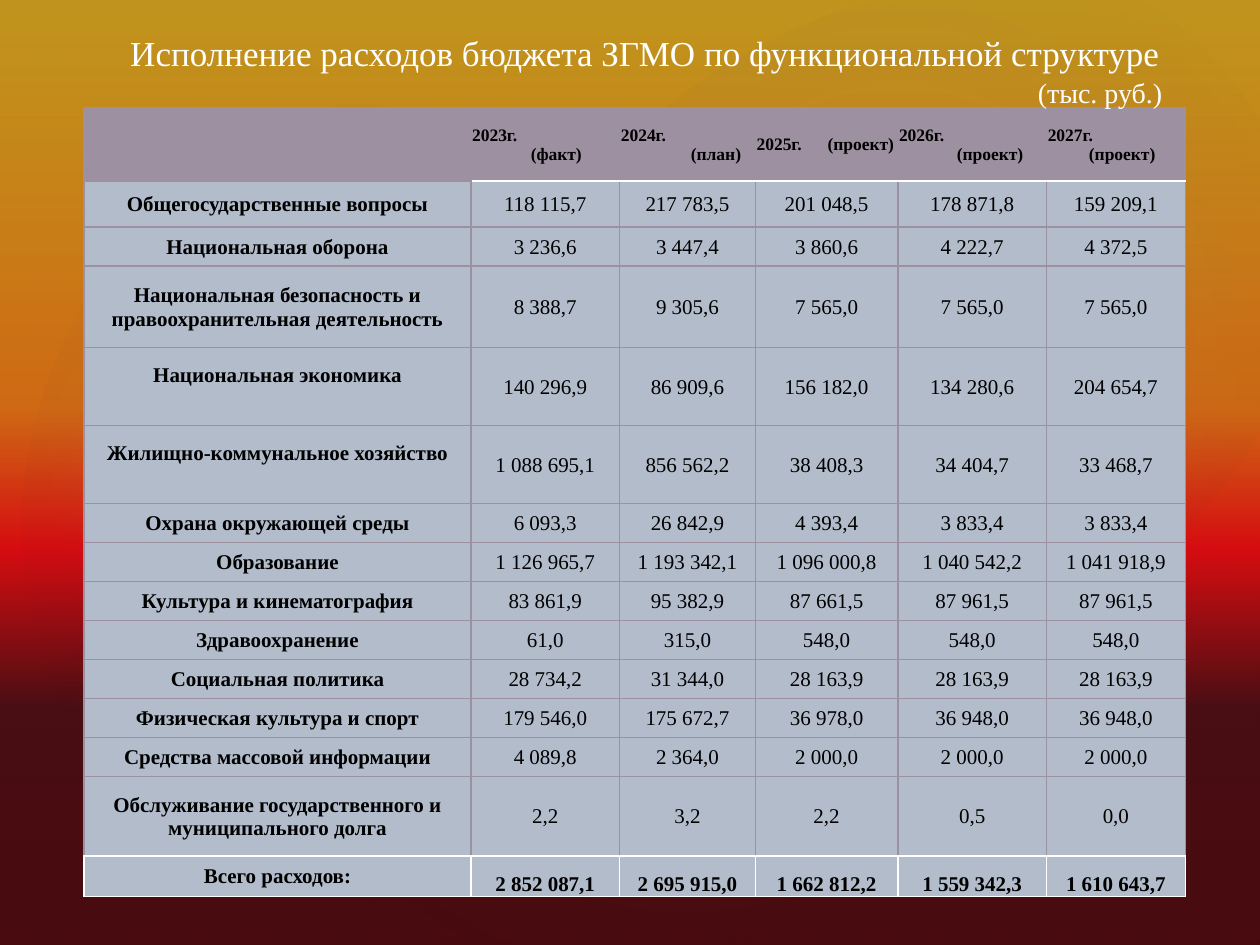
from typing import NamedTuple

from lxml import etree
from pptx import Presentation
from pptx.dml.color import RGBColor
from pptx.enum import shapes as kinds, text as txt
from pptx.oxml.ns import qn
from pptx.util import Pt

FONT = "Times New Roman"
WHITE, BLACK, MAUVE, PALE = "FFFFFF", "000000", "9D90A0", "B2BCCB"
MIDDLE, BOTTOM = txt.MSO_ANCHOR.MIDDLE, txt.MSO_ANCHOR.BOTTOM
LEFT, CENTER = txt.PP_ALIGN.LEFT, txt.PP_ALIGN.CENTER
INSET = 0.72


class Stop(NamedTuple):
    pos: int
    color: str
    alpha: int = 100


class Glow(NamedTuple):
    left: float
    top: float
    width: float
    height: float
    turn: float
    alpha: int


class Head(NamedTuple):
    year: str
    note: str
    indent: float
    width: float
    one_line: bool = False


class Row(NamedTuple):
    name: str
    values: str
    height: float = 22.3
    lift: float = 0


SKY = [Stop(0, "FFC000"), Stop(43, "FF7A00"), Stop(58, "FF0300"), Stop(75, "4D0808")]
VEIL = [Stop(0, "504652", 36), Stop(100, "242852", 10)]
GLOWS = [
    Glow(108, 82, 570, 449, 328.7, 7),
    Glow(-21.6, 92, 436, 353, 294.3, 8),
    Glow(258, 9.4, 510, 374, 328.7, 8),
]
NAME_WIDTH, HEAD_HEIGHT = 221, 41.5
HEADS = [
    Head("2023г.", "(факт)", 33.5, 85),
    Head("2024г.", "(план)", 40, 77.6),
    Head("2025г.", "(проект)", 40.5, 81.4, True),
    Head("2026г.", "(проект)", 33, 85),
    Head("2027г.", "(проект)", 23.5, 79.3),
]
ROWS = [
    Row("Общегосударственные вопросы", "118 115,7|217 783,5|201 048,5|178 871,8|159 209,1", 26.5),
    Row("Национальная оборона", "3 236,6|3 447,4|3 860,6|4 222,7|4 372,5"),
    Row("Национальная безопасность и правоохранительная деятельность",
        "8 388,7|9 305,6|7 565,0|7 565,0|7 565,0", 46.5),
    Row("Национальная экономика", "140 296,9|86 909,6|156 182,0|134 280,6|204 654,7", 44.6, 13.5),
    Row("Жилищно-коммунальное хозяйство",
        "1 088 695,1|856 562,2|38 408,3|34 404,7|33 468,7", 44.6, 13.5),
    Row("Охрана окружающей среды", "6 093,3|26 842,9|4 393,4|3 833,4|3 833,4"),
    Row("Образование", "1 126 965,7|1 193 342,1|1 096 000,8|1 040 542,2|1 041 918,9"),
    Row("Культура и кинематография", "83 861,9|95 382,9|87 661,5|87 961,5|87 961,5"),
    Row("Здравоохранение", "61,0|315,0|548,0|548,0|548,0"),
    Row("Социальная политика", "28 734,2|31 344,0|28 163,9|28 163,9|28 163,9"),
    Row("Физическая культура и спорт", "179 546,0|175 672,7|36 978,0|36 948,0|36 948,0"),
    Row("Средства массовой информации", "4 089,8|2 364,0|2 000,0|2 000,0|2 000,0"),
    Row("Обслуживание государственного и муниципального долга", "2,2|3,2|2,2|0,5|0,0", 45.5),
    Row("Всего расходов:", "2 852 087,1|2 695 915,0|1 662 812,2|1 559 342,3|1 610 643,7", 23),
]


def rgb(color: str) -> RGBColor:
    return RGBColor.from_string(color)


def node(parent, tag: str, **attrs):
    return etree.SubElement(parent, qn(tag), {key: str(val) for key, val in attrs.items()})


def blend(fill, owner, stops: list[Stop], radial: bool = False) -> None:
    """Give the owner's fill any number of stops, top-down or radial."""
    fill.gradient()
    grad = next(owner.iter(qn("a:gradFill")))
    for child in list(grad):
        grad.remove(child)
    group = node(grad, "a:gsLst")
    for stop in stops:
        color = node(node(group, "a:gs", pos=stop.pos * 1000), "a:srgbClr", val=stop.color)
        node(color, "a:alpha", val=stop.alpha * 1000)
    if radial:
        center = node(grad, "a:path", path="circle")
        node(center, "a:fillToRect", l=50000, t=50000, r=50000, b=50000)
    else:
        node(grad, "a:lin", ang=5400000, scaled=0)


def backdrop(slide, kind, box, stops: list[Stop], turn: float = 0, radial: bool = False) -> None:
    shape = slide.shapes.add_shape(kind, *map(Pt, box))
    shape.rotation = turn
    shape.shadow.inherit = False
    shape.line.fill.background()
    blend(shape.fill, shape.element, stops, radial)


def style(par, size: float, color: str, bold: bool = False, align=CENTER) -> None:
    par.alignment = align
    font = par.font
    font.name, font.size, font.bold = FONT, Pt(size), bold
    font.color.rgb = rgb(color)


def caption(shape, words: str, size: float, box, anchor) -> None:
    shape.left, shape.top, shape.width, shape.height = map(Pt, box)
    frame = shape.text_frame
    frame.word_wrap = True
    frame.auto_size = txt.MSO_AUTO_SIZE.NONE
    frame.vertical_anchor = anchor
    frame.text = words
    style(frame.paragraphs[0], size, WHITE)


def dress(cell, fill: str, edges: dict, anchor=MIDDLE, lift: float = 0) -> None:
    """Set a cell's borders, fill, margins and anchor."""
    props = cell._tc.get_or_add_tcPr()
    for side in "LRTB":
        color, width = edges.get(side, (MAUVE, 1))
        line = node(props, f"a:ln{side}", w=int(Pt(width)))
        node(node(line, "a:solidFill"), "a:srgbClr", val=color)
    cell.fill.solid()
    cell.fill.fore_color.rgb = rgb(fill)
    cell.margin_left = cell.margin_right = cell.margin_top = Pt(INSET)
    cell.margin_bottom = Pt(lift)
    cell.vertical_anchor = anchor


def heading(cell, head: Head) -> None:
    """Write the year at the left and the note at its own indent."""
    frame = cell.text_frame
    par = frame.paragraphs[0]
    if head.one_line:
        par.text = f"{head.year}\t{head.note}"
        stops = node(par._p.get_or_add_pPr(), "a:tabLst")
        node(stops, "a:tab", pos=int(Pt(head.indent)), algn="l")
    else:
        par.text = head.year
        note = frame.add_paragraph()
        note.text = head.note
        note._p.get_or_add_pPr().set("marL", str(int(Pt(head.indent))))
    for par in frame.paragraphs:
        style(par, 10, BLACK, True, LEFT)


def budget(slide) -> None:
    widths = [NAME_WIDTH] + [head.width for head in HEADS]
    heights = [HEAD_HEIGHT] + [row.height for row in ROWS]
    grid = slide.shapes.add_table(len(heights), len(widths), Pt(48.1), Pt(61.8),
                                  Pt(sum(widths)), Pt(sum(heights))).table
    for col, width in zip(grid.columns, widths):
        col.width = Pt(width)
    for line, height in zip(grid.rows, heights):
        line.height = Pt(height)

    dress(grid.cell(0, 0), MAUVE, {})
    for c, head in enumerate(HEADS, 1):
        dress(grid.cell(0, c), MAUVE, {"B": (WHITE, 1.5)})
        heading(grid.cell(0, c), head)

    total = len(ROWS)
    for r, row in enumerate(ROWS, 1):
        for c, words in enumerate([row.name, *row.values.split("|")]):
            cell = grid.cell(r, c)
            edges = {"R": (MAUVE, 1.5)} if c == 0 else {}
            if r == 1 and c:
                edges["T"] = (WHITE, 1.5)
            if r == total - 1:
                edges["B"] = (WHITE, 1)
            if r == total:
                edges = dict.fromkeys("LRTB", (WHITE, 1))
            dress(cell, PALE, edges, BOTTOM if r == total and c else MIDDLE,
                  0 if c else row.lift)
            cell.text = words
            style(cell.text_frame.paragraphs[0], 12, BLACK, c == 0 or r == total)


def main() -> None:
    deck = Presentation()
    deck.slide_width, deck.slide_height = Pt(720), Pt(540)
    slide = deck.slides.add_slide(deck.slide_layouts[5])
    blend(slide.background.fill, slide.element, SKY)
    backdrop(slide, kinds.MSO_SHAPE.RECTANGLE, (0, 0, 720, 540), VEIL)
    for glow in GLOWS:
        backdrop(slide, kinds.MSO_SHAPE.OVAL, glow[:4],
                 [Stop(0, "C4BCC6", glow.alpha), Stop(58, "242852", 0)], glow.turn, True)
    title = slide.shapes.title
    slide.shapes.element.append(title.element)
    caption(title, "Исполнение расходов бюджета ЗГМО по функциональной структуре",
            20, (8.6, 0, 720, 45.4), BOTTOM)
    budget(slide)
    box = (563.8, 41.8, 129.6, 22.3)
    caption(slide.shapes.add_textbox(*map(Pt, box)), "(тыс. руб.)", 16, box, MIDDLE)
    deck.save("out.pptx")


if __name__ == "__main__":
    main()
